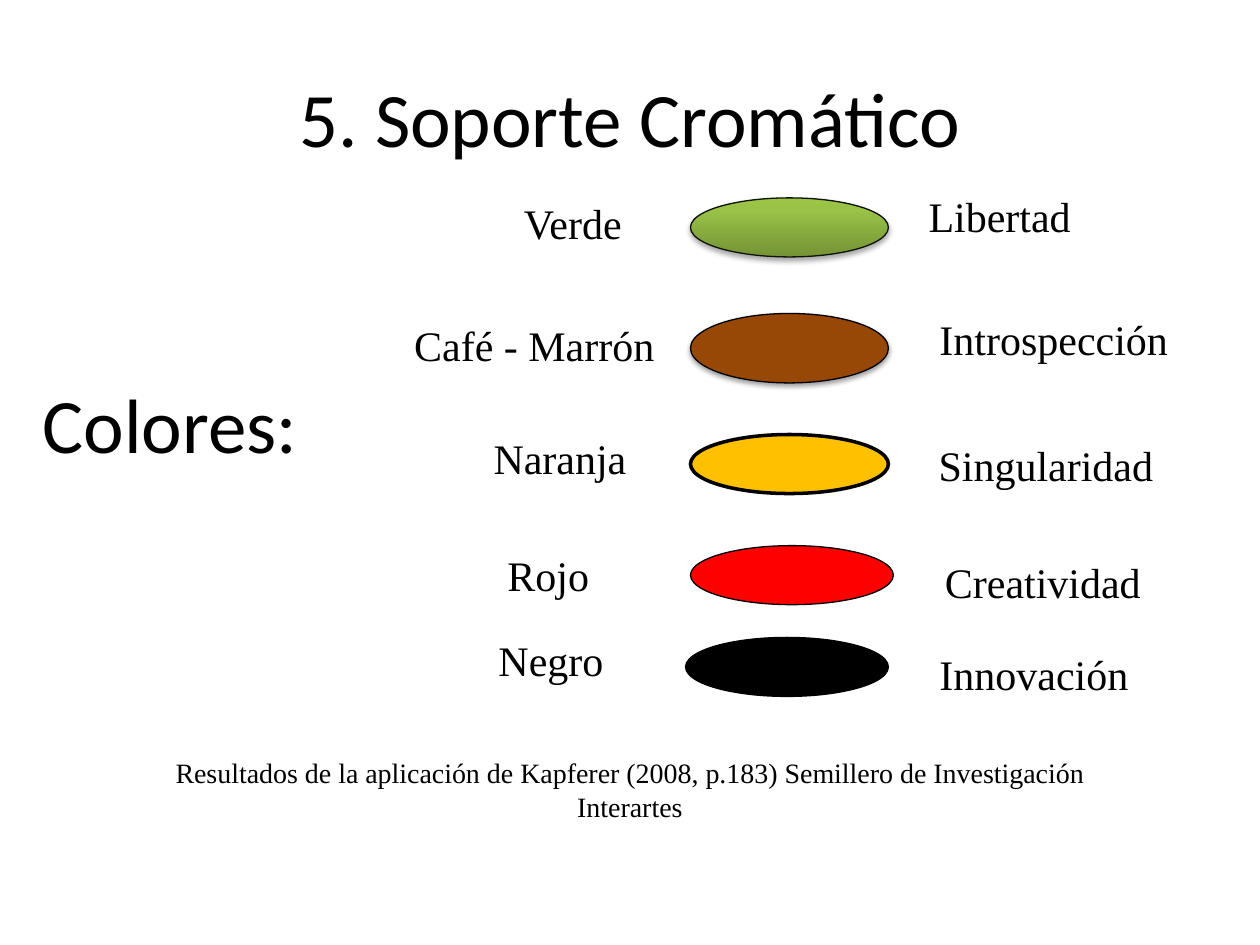
import copy
import pptx
import pptx.util
import pptx.dml.color
import pptx.enum.shapes
import pptx.enum.text
import pptx.oxml
import pptx.oxml.ns
from pptx.util import Cm

SERIF = "Times New Roman"
SANS = "Calibri"
BLACK = "000000"

# Headings and source: text, (left, top, width, height) in cm, size, font, centred
TEXTS = [
    ("5. Soporte Cromático", (1.27, 0.76, 22.86, 3.18), 44, SANS, True),
    ("Colores:", (0.61, 7.47, 5.79, 2.13), 44, SANS, False),
    ("Resultados de la aplicación de Kapferer (2008, p.183) "
     "Semillero de Investigación Interartes",
     (3.2, 15.11, 19, 1.63), 16, SERIF, True),
]

# Per colour: (name, left, top, width), (meaning, left, top, width),
# ellipse box, fill stops, line colour, line width, shadow (opacity %, distance pt)
GREEN = [(0, "759336"), (80, "99C247"), (100, "9BC545")]
COLOURS = [
    (("Verde", 10.31, 3.86, 4.8), ("Libertad", 18.47, 3.71, 4.65),
     (13.92, 3.99, 3.99, 1.19), GREEN, "0F1208", 0.75, (35, 1.8)),
    (("Café - Marrón", 8.1, 6.32, 5.82), ("Introspección", 18.69, 6.2, 5.44),
     (13.92, 6.32, 3.99, 1.4), "974806", BLACK, 0.75, (38, 1.6)),
    (("Naranja", 9.7, 8.59, 3.23), ("Singularidad", 18.67, 8.74, 5.03),
     (13.92, 8.76, 3.99, 1.19), "FFC000", BLACK, 2, None),
    (("Rojo", 9.98, 10.95, 3), ("Creatividad", 18.8, 11.1, 4.6),
     (13.92, 11, 4.09, 1.19), "FF0000", BLACK, 0.75, None),
    (("Negro", 9.8, 12.67, 3), ("Innovación", 18.69, 12.95, 4.6),
     (13.82, 12.85, 4.09, 1.19), BLACK, BLACK, 0.75, None),
]
LABEL_HEIGHT = 1.27


def rgb(value):
    return pptx.dml.color.RGBColor.from_string(value)


def add_text(text, box, size, font, centred=False):
    sp = slide.shapes.add_textbox(*map(Cm, box))
    tf = sp.text_frame
    tf.word_wrap = True
    tf.auto_size = pptx.enum.text.MSO_AUTO_SIZE.SHAPE_TO_FIT_TEXT
    p = tf.paragraphs[0]
    if centred:
        p.alignment = pptx.enum.text.PP_ALIGN.CENTER
    r = p.add_run()
    r.text = text
    r.font.size = pptx.util.Pt(size)
    r.font.name = font
    r.font.color.rgb = rgb(BLACK)
    return tf


def fill_gradient(fill, stops, sp):
    fill.gradient()
    fill.gradient_angle = 90
    gs_list = sp._element.spPr.find(".//" + pptx.oxml.ns.qn("a:gsLst"))
    for _ in stops[2:]:
        gs_list.append(copy.deepcopy(gs_list[-1]))
    for stop, (position, colour) in zip(fill.gradient_stops, stops):
        stop.position = position / 100
        stop.color.rgb = rgb(colour)


def add_shadow(sp, opacity, distance):
    effects = sp._element.spPr.find(pptx.oxml.ns.qn("a:effectLst"))
    effects.append(pptx.oxml.parse_xml(
        f'<a:outerShdw {pptx.oxml.ns.nsdecls("a")} blurRad="{pptx.util.Pt(3.1)}" '
        f'dist="{pptx.util.Pt(distance)}" dir="5400000" rotWithShape="0">'
        f'<a:srgbClr val="{BLACK}"><a:alpha val="{opacity * 1000}"/></a:srgbClr>'
        '</a:outerShdw>'))


def add_ellipse(box, fill, line, width, shadow):
    sp = slide.shapes.add_shape(pptx.enum.shapes.MSO_SHAPE.OVAL, *map(Cm, box))
    if isinstance(fill, list):
        fill_gradient(sp.fill, fill, sp)
    else:
        sp.fill.solid()
        sp.fill.fore_color.rgb = rgb(fill)
    sp.line.color.rgb = rgb(line)
    sp.line.width = pptx.util.Pt(width)
    sp.shadow.inherit = False
    if shadow:
        add_shadow(sp, *shadow)


prs = pptx.Presentation()
prs.slide_width, prs.slide_height = Cm(25.4), Cm(19.05)
slide = prs.slides.add_slide(prs.slide_layouts[6])

# Title, side heading and source; the title keeps its box and is centred in it
frames = [add_text(*item) for item in TEXTS]
frames[0].auto_size = pptx.enum.text.MSO_AUTO_SIZE.NONE
frames[0].vertical_anchor = pptx.enum.text.MSO_ANCHOR.MIDDLE

# Colour rows: name, ellipse, meaning
for name, meaning, *ellipse in COLOURS:
    add_ellipse(*ellipse)
    for text, left, top, width in (name, meaning):
        add_text(text, (left, top, width, LABEL_HEIGHT), 24, SERIF)

prs.save("out.pptx")
